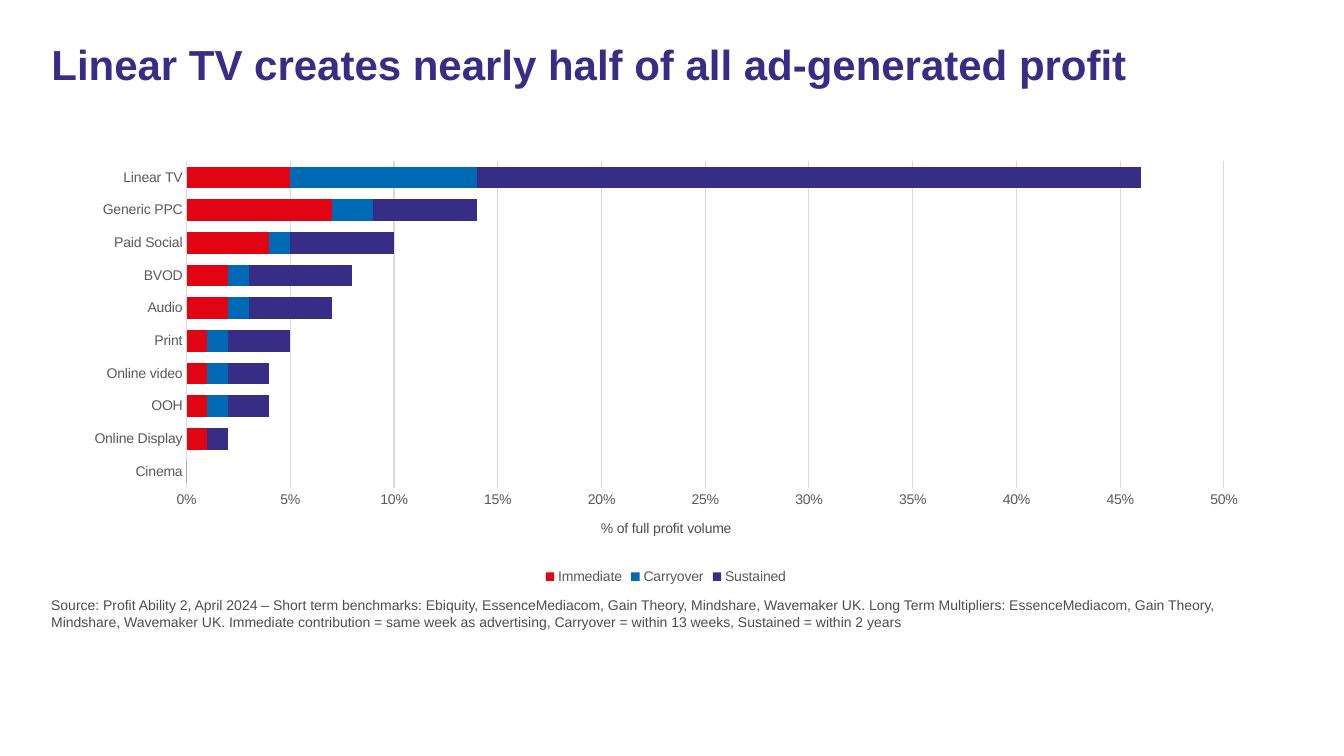
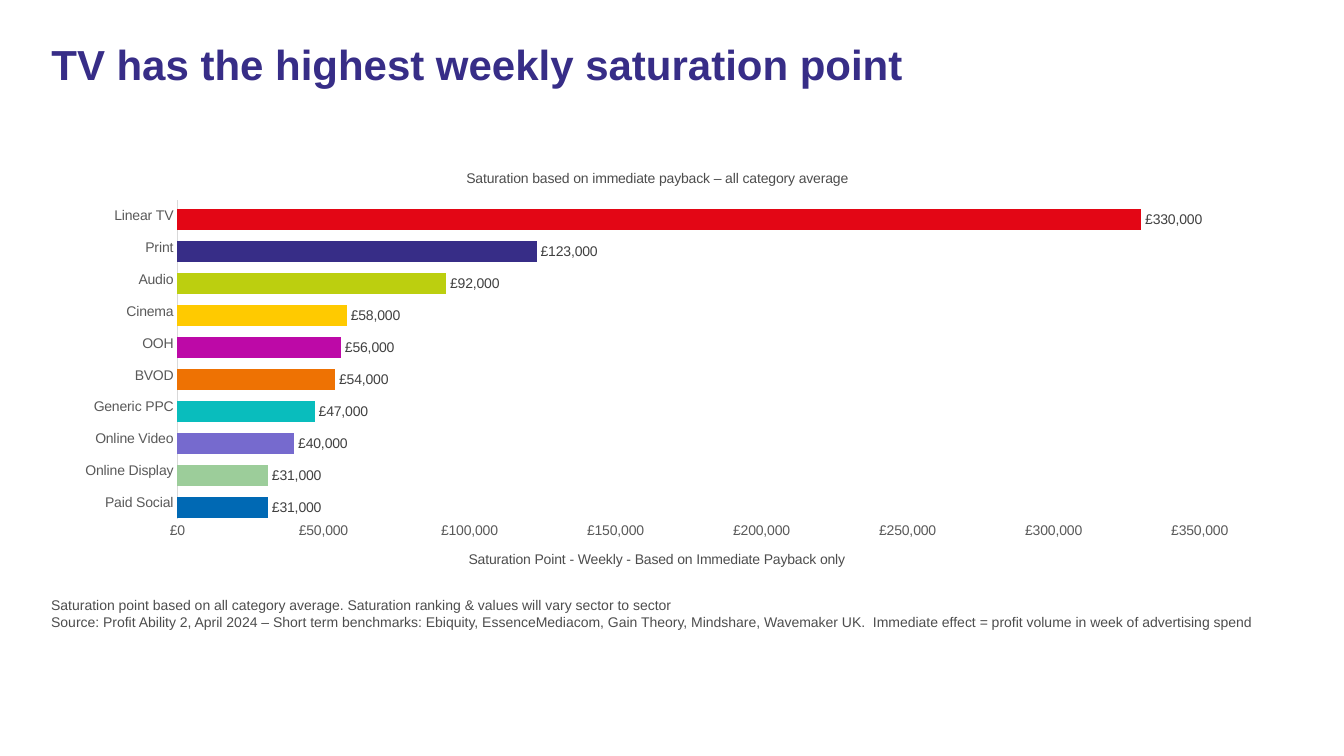
from pptx import Presentation
from pptx.chart import data
from pptx.dml.color import RGBColor
from pptx.enum import chart as kinds, text
from pptx.oxml import ns, xmlchemy
from pptx.util import Inches, Pt

INDIGO = RGBColor(0x37, 0x2D, 0x87)
BLUE = RGBColor(0x00, 0x69, 0xB4)
RED = RGBColor(0xE1, 0x05, 0x14)
SCARLET = RGBColor(0xE3, 0x06, 0x15)
SAGE = RGBColor(0x9C, 0xCD, 0x9A)
LAVENDER = RGBColor(0x76, 0x6A, 0xCE)
TEAL = RGBColor(0x09, 0xBD, 0xBD)
ORANGE = RGBColor(0xEE, 0x72, 0x03)
MAGENTA = RGBColor(0xBD, 0x09, 0xA7)
YELLOW = RGBColor(0xFF, 0xCA, 0x00)
LIME = RGBColor(0xBC, 0xCF, 0x0F)
BODY_GREY = RGBColor(0x4D, 0x4D, 0x4D)
AXIS_GREY = RGBColor(0x59, 0x59, 0x59)
LABEL_GREY = RGBColor(0x40, 0x40, 0x40)
RULE_GREY = RGBColor(0xD9, 0xD9, 0xD9)

PERCENT = "0%"
POUNDS = '"£"#,##0'

PROFIT_SHARE = {
    "Cinema": (0, 0, 0),
    "Online Display": (0.01, 0, 0.01),
    "OOH": (0.01, 0.01, 0.02),
    "Online video": (0.01, 0.01, 0.02),
    "Print": (0.01, 0.01, 0.03),
    "Audio": (0.02, 0.01, 0.04),
    "BVOD": (0.02, 0.01, 0.05),
    "Paid Social": (0.04, 0.01, 0.05),
    "Generic PPC": (0.07, 0.02, 0.05),
    "Linear TV": (0.05, 0.09, 0.32),
}
SATURATION = {
    "Paid Social": (31000, BLUE),
    "Online Display": (31000, SAGE),
    "Online Video": (40000, LAVENDER),
    "Generic PPC": (47000, TEAL),
    "BVOD": (54000, ORANGE),
    "OOH": (56000, MAGENTA),
    "Cinema": (58000, YELLOW),
    "Audio": (92000, LIME),
    "Print": (123000, INDIGO),
    "Linear TV": (330000, SCARLET),
}


class Deck:
    font = "Arial"
    left, width = Inches(0.41), Inches(12.4)
    chart_width, chart_height = Inches(11.81), Inches(4.33)

    def __init__(self):
        self.presentation = Presentation()
        self.presentation.slide_width = Inches(13.33)
        self.presentation.slide_height = Inches(7.5)
        self.slide = None

    def style(self, font, color, size=10, bold=False):
        font.name = self.font
        font.size = Pt(size)
        font.bold = bold
        font.color.rgb = color

    def add_slide(self, headline):
        layout = self.presentation.slide_layouts[5]
        self.slide = self.presentation.slides.add_slide(layout)
        title = self.slide.shapes.title
        title.left, title.top = self.left, Inches(0.39)
        title.width, title.height = self.width, Inches(1.12)
        frame = title.text_frame
        frame.text = headline
        frame.vertical_anchor = text.MSO_ANCHOR.TOP
        frame.auto_size = text.MSO_AUTO_SIZE.NONE
        paragraph = frame.paragraphs[0]
        paragraph.alignment = text.PP_ALIGN.LEFT
        paragraph.line_spacing = 0.9
        self.style(paragraph.font, INDIGO, 30, True)

    def add_source(self, *lines):
        box = self.slide.shapes.add_textbox(
            self.left, Inches(5.87), self.width, Inches(0.33))
        frame = box.text_frame
        frame.word_wrap = True
        frame.text = "\n".join(lines)
        for paragraph in frame.paragraphs:
            self.style(paragraph.font, BODY_GREY)

    def caption(self, owner, wording):
        owner.text_frame.text = wording
        self.style(owner.text_frame.paragraphs[0].font, BODY_GREY)

    def place(self, element, left, top, width=None, height=None):
        layout = element.find(ns.qn("c:layout"))
        if layout is None:
            layout = xmlchemy.OxmlElement("c:layout")
            element.insert(0, layout)
        manual = xmlchemy.OxmlElement("c:manualLayout")
        layout.append(manual)
        settings = {"xMode": "edge", "yMode": "edge",
                    "x": left / self.chart_width, "y": top / self.chart_height}
        if width:
            settings = {"layoutTarget": "inner", **settings,
                        "w": width / self.chart_width,
                        "h": height / self.chart_height}
        for tag, value in settings.items():
            setting = xmlchemy.OxmlElement(f"c:{tag}")
            setting.set("val", str(value))
            manual.append(setting)

    def place_plot(self, chart, top, width, height):
        self.place(chart.element.chart.plotArea, Inches(1.15), top, width, height)

    def add_bars(self, kind, left, categories, series, gap, overlap):
        values = data.CategoryChartData()
        values.categories = categories
        for name, (numbers, _) in series.items():
            values.add_series(name, numbers)
        chart = self.slide.shapes.add_chart(
            kind, left, Inches(1.51), self.chart_width, self.chart_height,
            values).chart
        self.style(chart.font, AXIS_GREY)
        chart.has_title = False
        chart.has_legend = False
        plot = chart.plots[0]
        plot.vary_by_categories = False
        plot.gap_width, plot.overlap = gap, overlap
        for bars, (_, color) in zip(plot.series, series.values()):
            bars.format.fill.solid()
            bars.format.fill.fore_color.rgb = color
            bars.invert_if_negative = False
        return chart

    def format_axes(self, chart, wording, number_format, maximum, step, grid):
        for axis in (chart.category_axis, chart.value_axis):
            axis.major_tick_mark = kinds.XL_TICK_MARK.NONE
            axis.minor_tick_mark = kinds.XL_TICK_MARK.NONE
            axis.has_major_gridlines = False
            self.style(axis.tick_labels.font, AXIS_GREY)
        self.rule(chart.category_axis.format.line)
        scale = chart.value_axis
        scale.format.line.fill.background()
        scale.minimum_scale, scale.maximum_scale = 0, maximum
        scale.major_unit = step
        scale.tick_labels.number_format = number_format
        scale.tick_labels.number_format_is_linked = False
        self.caption(scale.axis_title, wording)
        if grid:
            self.rule(scale.major_gridlines.format.line)

    def rule(self, line):
        line.color.rgb = RULE_GREY
        line.width = Pt(0.75)

    def add_legend(self, chart):
        chart.has_legend = True
        chart.legend.position = kinds.XL_LEGEND_POSITION.BOTTOM
        chart.legend.include_in_layout = False
        self.style(chart.legend.font, AXIS_GREY)

    def add_chart_title(self, chart, wording, left, top):
        chart.has_title = True
        self.caption(chart.chart_title, wording)
        self.place(chart.chart_title.element, left, top)

    def label_values(self, bars, number_format):
        labels = bars.data_labels
        labels.show_value = True
        labels.position = kinds.XL_LABEL_POSITION.OUTSIDE_END
        labels.number_format = number_format
        labels.number_format_is_linked = False
        self.style(labels.font, LABEL_GREY)

    def color_points(self, bars, colors):
        for index, color in enumerate(colors):
            fill = bars.points[index].format.fill
            fill.solid()
            fill.fore_color.rgb = color


def profit_slide(deck):
    deck.add_slide("Linear TV creates nearly half of all ad-generated profit")
    immediate, carryover, sustained = zip(*PROFIT_SHARE.values())
    effects = {
        "Immediate": (immediate, RED),
        "Carryover": (carryover, BLUE),
        "Sustained": (sustained, INDIGO),
    }
    profit = deck.add_bars(kinds.XL_CHART_TYPE.BAR_STACKED, Inches(0.7),
                           PROFIT_SHARE, effects, gap=50, overlap=100)
    deck.format_axes(profit, "% of full profit volume", PERCENT,
                     maximum=0.5, step=0.05, grid=True)
    deck.add_legend(profit)
    deck.place_plot(profit, Inches(0.09), Inches(10.29), Inches(3.24))
    deck.add_source(
        "Source: Profit Ability 2, April 2024 – Short term benchmarks: Ebiquity, "
        "EssenceMediacom, Gain Theory, Mindshare, Wavemaker UK. Long Term "
        "Multipliers: EssenceMediacom, Gain Theory, Mindshare, Wavemaker UK. "
        "Immediate contribution = same week as advertising, Carryover = within "
        "13 weeks, Sustained = within 2 years")


def saturation_slide(deck):
    deck.add_slide("TV has the highest weekly saturation point")
    amounts, colors = zip(*SATURATION.values())
    unfilled = [None] * len(SATURATION)
    series = {
        "Series 1": (amounts, INDIGO),
        "Series 2": (unfilled, BLUE),
        "Series 3": (unfilled, RED),
    }
    saturation = deck.add_bars(kinds.XL_CHART_TYPE.BAR_CLUSTERED, Inches(0.61),
                               SATURATION, series, gap=10, overlap=80)
    deck.format_axes(
        saturation, "Saturation Point - Weekly - Based on Immediate Payback only",
        POUNDS, maximum=350000, step=50000, grid=False)
    deck.add_chart_title(
        saturation, "Saturation based on immediate payback – all category average",
        Inches(3.99), Inches(0.14))
    deck.place_plot(saturation, Inches(0.47), Inches(10.14), Inches(3.17))
    payback = saturation.plots[0].series[0]
    deck.color_points(payback, colors)
    deck.label_values(payback, POUNDS)
    deck.add_source(
        "Saturation point based on all category average. Saturation ranking & "
        "values will vary sector to sector",
        "Source: Profit Ability 2, April 2024 – Short term benchmarks: Ebiquity, "
        "EssenceMediacom, Gain Theory, Mindshare, Wavemaker UK.  Immediate effect "
        "= profit volume in week of advertising spend")


def main():
    deck = Deck()
    profit_slide(deck)
    saturation_slide(deck)
    deck.presentation.save("out.pptx")


if __name__ == "__main__":
    main()
